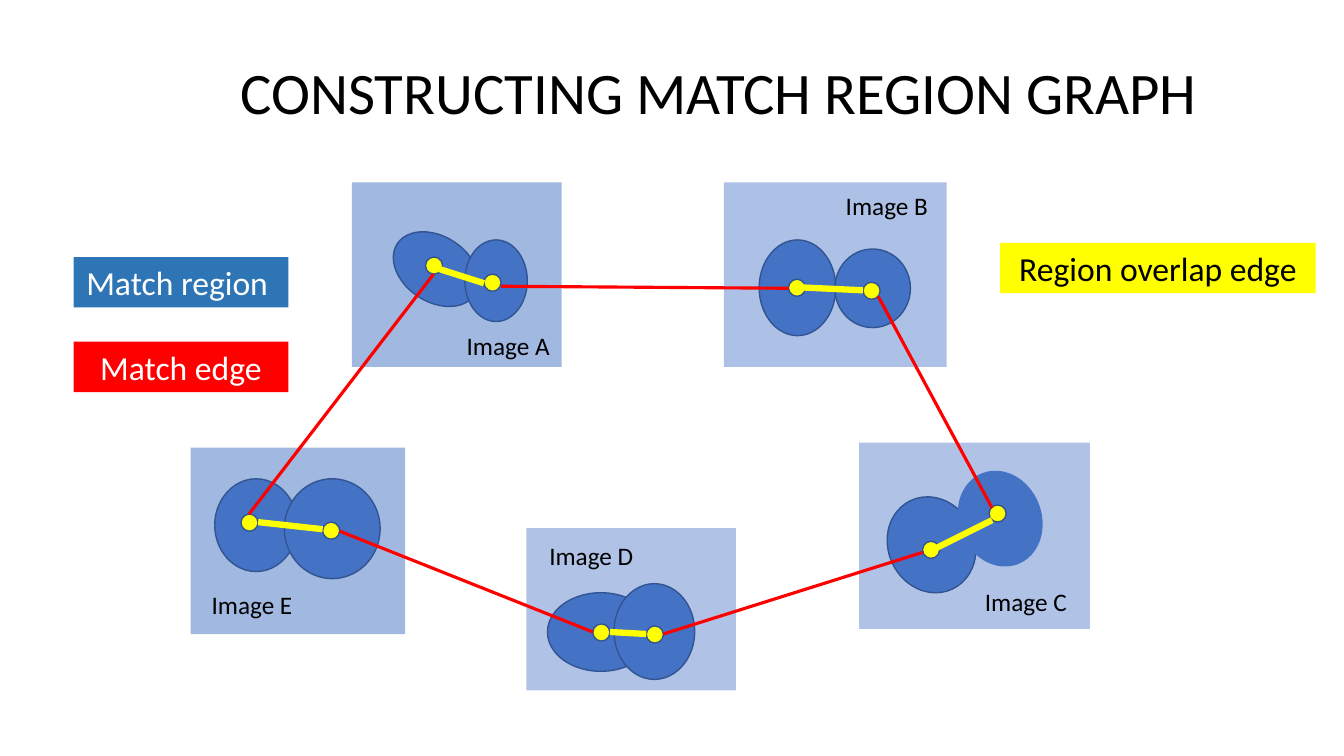
from dataclasses import dataclass

from lxml import etree
from pptx import Presentation, util as u
from pptx.dml.color import RGBColor
from pptx.enum import shapes, text
from pptx.oxml.ns import qn

CELL = u.Inches(0.1)  # the grid has square cells
COLS, ROWS = 133.3, 75
FONT = "Calibri"
BLUE, OUTLINE, LEGEND_BLUE = "4472C4", "325491", "2E75B6"
YELLOW, RED, BLACK, WHITE = "FFFF00", "FF0000", "000000", "FFFFFF"
NODE = 1.7


@dataclass
class MatchImage:
    """One image; boxes are (left, top, width, height) in grid cells."""
    name: str
    frame: tuple
    opacity: int
    label: tuple
    regions: list  # (box, rotation, has outline)
    nodes: list  # top left corners
    overlap: tuple  # ends of the overlap edge


IMAGES = [
    MatchImage("Image A", (34.9, 18.1, 20.8, 18.3), 50, (45.3, 32.3, 10.3, 4),
               [((40, 22.1, 6.5, 9.2), 303.2, True), ((46.1, 23.8, 6.2, 8.1), 0, True)],
               [(42.2, 25.5), (48, 27.2)], (43.6, 26.7, 48, 28.1)),
    MatchImage("Image B", (71.8, 18.1, 22.1, 18.3), 44, (82.9, 18.4, 10.3, 4),
               [((75.3, 23.8, 7.6, 9.5), 0, True), ((82.8, 24.7, 7.5, 7.8), 0, True)],
               [(78.2, 27.7), (85.6, 28)], (79.2, 28.5, 85.6, 28.8)),
    MatchImage("Image C", (85.2, 43.9, 22.9, 18.5), 42, (96.7, 57.7, 10.2, 4),
               [((88.1, 49.2, 8.6, 9.7), 335, True), ((95.1, 46.6, 8.2, 9.7), 338.3, False)],
               [(91.5, 53.7), (98.1, 50.1)], (92.6, 54.5, 98.4, 51.6)),
    MatchImage("Image D", (52.2, 52.4, 20.8, 16.1), 42, (53.5, 53.1, 10.4, 4),
               [((55.7, 57.4, 7.8, 10.6), 270, True), ((60.9, 57.9, 8, 9.5), 0, True)],
               [(58.8, 61.9), (64.1, 62.1)], (60.5, 62.7, 64.1, 62.9)),
    MatchImage("Image E", (18.9, 44.4, 21.3, 18.5), 50, (20, 58, 10.1, 4),
               [((21.3, 47.5, 8.2, 9.2), 0, True), ((28.2, 47.5, 9.5, 9.9), 0, True)],
               [(23.9, 51), (32, 51.8)], (25.6, 51.8, 32, 52.5)),
]
MATCH_EDGES = [
    (49.7, 28.4, 78.2, 28.6),
    (87.1, 29.4, 98.4, 50.4),
    (65.8, 62.9, 91.5, 54.8),
    (33.7, 52.7, 58.8, 62.7),
    (24.7, 51, 43, 27.2),
]
LEGEND = [
    ("Match region ", (7.3, 25.5, 21.3, 5), LEGEND_BLUE, WHITE),
    ("Match edge", (7.3, 33.9, 21.3, 5), RED, WHITE),
    ("Region overlap edge", (99.2, 24.1, 31.3, 5), YELLOW, BLACK),
]


def rgb(code):
    return RGBColor.from_string(code)


def cells(*values):
    return [round(v * CELL) for v in values]


def write(s, words, size, color, align=None):
    tf = s.text_frame
    tf.text = words
    p = tf.paragraphs[0]
    p.alignment = align
    p.font.name, p.font.size = FONT, u.Pt(size)
    p.font.color.rgb = rgb(color)
    return tf, p


def add_title(slide, words):
    s = slide.shapes.title
    s.left, s.top, s.width, s.height = cells(9.2, 2.2, 124.2, 14.5)
    tf, p = write(s, words, 42, BLACK, text.PP_ALIGN.CENTER)
    tf.auto_size = text.MSO_AUTO_SIZE.NONE
    tf.vertical_anchor = text.MSO_ANCHOR.MIDDLE
    p.line_spacing = 0.9


def add_filled(slide, kind, box, fill, outline=None, opacity=100, rotation=0):
    s = slide.shapes.add_shape(kind, *cells(*box))
    s.shadow.inherit = False
    s.rotation = rotation
    s.fill.solid()
    s.fill.fore_color.rgb = rgb(fill)
    if opacity < 100:
        color = s.fill._xPr.find(qn("a:solidFill"))[0]
        etree.SubElement(color, qn("a:alpha")).set("val", str(opacity * 1000))
    if outline:
        s.line.color.rgb = rgb(outline)
        s.line.width = u.Pt(1)
    else:
        s.line.fill.background()
    return s


def add_edge(slide, ends, color, width):
    s = slide.shapes.add_connector(shapes.MSO_CONNECTOR.STRAIGHT, *cells(*ends))
    s.line.color.rgb = rgb(color)
    s.line.width = u.Pt(width)
    etree.SubElement(s._element.spPr, qn("a:effectLst"))


def add_image_label(slide, words, box):
    s = slide.shapes.add_textbox(*cells(*box))
    tf, _ = write(s, words, 18, BLACK)
    tf.word_wrap = False


def add_legend_key(slide, words, box, fill, color):
    s = add_filled(slide, shapes.MSO_SHAPE.RECTANGLE, box, fill)
    tf, _ = write(s, words, 24, color, text.PP_ALIGN.CENTER)
    tf.word_wrap = True


def main():
    prs = Presentation()
    prs.slide_width, prs.slide_height = cells(COLS, ROWS)
    slide = prs.slides.add_slide(prs.slide_layouts.get_by_name("Title Only"))
    add_title(slide, "CONSTRUCTING MATCH REGION GRAPH")

    shape = shapes.MSO_SHAPE
    for image in IMAGES:
        add_filled(slide, shape.RECTANGLE, image.frame, BLUE, opacity=image.opacity)
        for box, rotation, outlined in image.regions:
            add_filled(slide, shape.OVAL, box, BLUE,
                       OUTLINE if outlined else None, rotation=rotation)
        for corner in image.nodes:
            add_filled(slide, shape.FLOWCHART_CONNECTOR, (*corner, NODE, NODE),
                       YELLOW, OUTLINE)
        add_edge(slide, image.overlap, YELLOW, 4.5)
    for ends in MATCH_EDGES:
        add_edge(slide, ends, RED, 2.25)
    for key in LEGEND:
        add_legend_key(slide, *key)
    for image in IMAGES:
        add_image_label(slide, image.name, image.label)
    prs.save("out.pptx")


if __name__ == "__main__":
    main()
